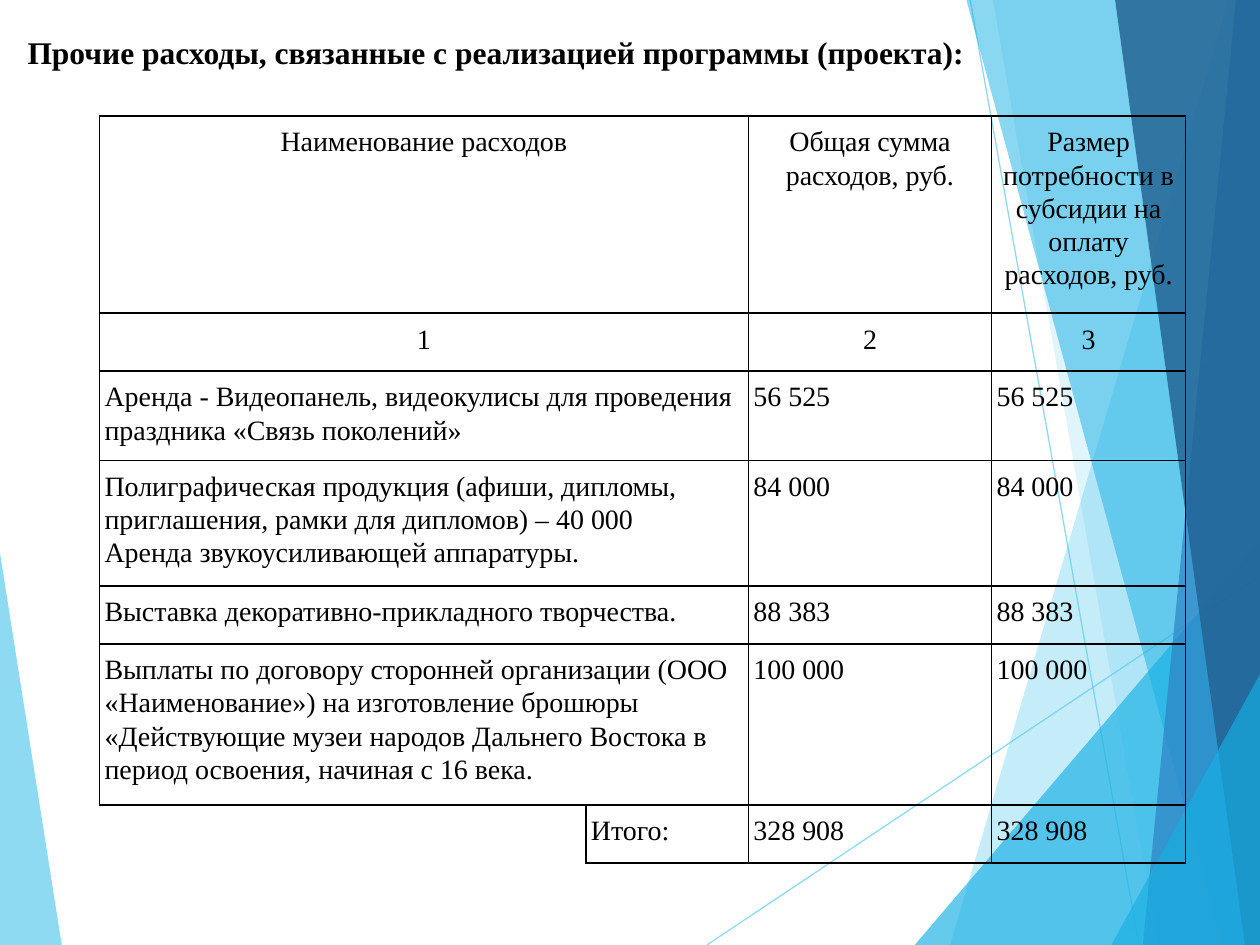
from lxml.etree import SubElement
from pptx import Presentation
from pptx.dml.color import RGBColor
from pptx.enum.shapes import MSO_CONNECTOR
from pptx.enum.text import MSO_AUTO_SIZE, PP_ALIGN
from pptx.oxml.ns import qn
from pptx.util import Inches, Pt

FONT = "Times New Roman"
TITLE = "Прочие расходы, связанные с реализацией программы (проекта):"

# Decoration, back to front: outline or line ends, colour, opacity in percent
LEFT_WEDGE = ([(0, 4.39), (0.49, 7.5), (0, 7.5)], "5FCBEF", 70)
LINES = [
    ((5.61, 7.5), (10, 4.57)),
    ((7.7, 0), (9.04, 7.5)),
]
RIGHT_WEDGES = [
    ([(9.75, 0), (7.54, 7.5), (10, 7.5), (10, 0)], "5FCBEF", 36),
    ([(7.88, 0), (9.19, 7.5), (10, 7.5), (10, 0)], "5FCBEF", 20),
    ([(7.26, 7.5), (10, 4.29), (10, 7.5)], "17B0E4", 66),
    ([(7.67, 0), (9.7, 7.5), (10, 7.5), (10, 0)], "17B0E4", 50),
    ([(9.81, 0), (9.07, 7.5), (10, 7.5), (10, 0)], "2E83C3", 70),
    ([(8.85, 0), (9.88, 7.5), (10, 7.5), (10, 0)], "226292", 82),
    ([(8.82, 7.5), (10, 5.35), (10, 7.5)], "17B0E4", 66),
]

COLUMN_WIDTHS = [3.86, 1.29, 1.93, 1.54]
HEADER_ROWS = 2
# Row height, then name, total and subsidy; the name spans two columns
ROWS = [
    (1.56, "Наименование расходов", "Общая сумма расходов, руб.",
     "Размер потребности в субсидии на оплату расходов, руб."),
    (0.46, "1", "2", "3"),
    (0.71, "Аренда - Видеопанель, видеокулисы для проведения праздника «Связь поколений»",
     "56 525", "56 525"),
    (0.99, "Полиграфическая продукция (афиши, дипломы, приглашения, рамки для дипломов) – 40 000\n"
           "Аренда звукоусиливающей аппаратуры.", "84 000", "84 000"),
    (0.46, "Выставка декоративно-прикладного творчества.", "88 383", "88 383"),
    (1.28, "Выплаты по договору сторонней организации (ООО «Наименование») на изготовление "
           "брошюры «Действующие музеи народов Дальнего Востока в период освоения, "
           "начиная с 16 века.", "100 000", "100 000"),
    (0.46, "Итого:", "328 908", "328 908"),
]
CELL_FORMAT = {
    "margin_left": Inches(0.04), "margin_right": Inches(0.04),
    "margin_top": Inches(0.07), "margin_bottom": Inches(0.07),
}


def color(value):
    return RGBColor.from_string(value)


def set_opacity(shape, percent):
    for node in shape.element.spPr.iter(qn("a:srgbClr")):
        SubElement(node, qn("a:alpha"), val=str(percent * 1000))


def add_wedge(page, points, fill, opacity):
    corners = [(Inches(x), Inches(y)) for x, y in points]
    builder = page.shapes.build_freeform(*corners[0])
    builder.add_line_segments(corners[1:], close=True)
    shape = builder.convert_to_shape()
    shape.shadow.inherit = False
    shape.fill.solid()
    shape.fill.fore_color.rgb = color(fill)
    shape.line.fill.background()
    set_opacity(shape, opacity)


def add_thin_line(page, start, end):
    ends = [Inches(value) for value in start + end]
    line = page.shapes.add_connector(MSO_CONNECTOR.STRAIGHT, *ends)
    line.line.color.rgb = color("5FCBEF")
    line.line.width = Pt(0.75)
    set_opacity(line, 70)
    SubElement(line.element.spPr, qn("a:effectLst"))


def write(frame, text, size, align, bold=False, spacing=None):
    frame.text = text
    for para in frame.paragraphs:
        para.alignment = align
        para.line_spacing = spacing
        for span in para.runs:
            for name, value in {"name": FONT, "size": Pt(size), "bold": bold}.items():
                setattr(span.font, name, value)
            span.font.color.rgb = color("000000")


def set_borders(cell, sides):
    """Draw black lines on the given sides (L, R, T, B) and clear the others."""
    properties = cell._tc.get_or_add_tcPr()
    for index, side in enumerate("LRTB"):
        line = properties.makeelement(qn(f"a:ln{side}"), {"w": str(Pt(1))})
        properties.insert(index, line)
        if side in sides:
            fill = SubElement(line, qn("a:solidFill"))
            SubElement(fill, qn("a:srgbClr"), val="000000")
        else:
            SubElement(line, qn("a:noFill"))


def add_expenses(page):
    frame = page.shapes.add_table(
        len(ROWS), len(COLUMN_WIDTHS), Inches(0.79), Inches(0.92),
        Inches(sum(COLUMN_WIDTHS)), Inches(sum(row[0] for row in ROWS)))
    table = frame.table
    table.first_row = table.horz_banding = False
    for column, width in zip(table.columns, COLUMN_WIDTHS):
        column.width = Inches(width)

    last = len(ROWS) - 1
    for index, (height, *texts) in enumerate(ROWS):
        table.rows[index].height = Inches(height)
        for column in range(len(COLUMN_WIDTHS)):
            cell = table.cell(index, column)
            for name, value in CELL_FORMAT.items():
                setattr(cell, name, value)
            cell.fill.background()
            set_borders(cell, "TR" if (index, column) == (last, 0) else "LRTB")
        if index < last:
            table.cell(index, 0).merge(table.cell(index, 1))
        align = PP_ALIGN.CENTER if index < HEADER_ROWS else PP_ALIGN.LEFT
        name_column = 1 if index == last else 0
        for column, text in zip((name_column, 2, 3), texts):
            write(table.cell(index, column).text_frame, text, 16, align, spacing=1.07)


def main():
    deck = Presentation()
    deck.slide_width, deck.slide_height = Inches(10), Inches(7.5)
    page = deck.slides.add_slide(deck.slide_layouts[6])

    add_wedge(page, *LEFT_WEDGE)
    for start, end in LINES:
        add_thin_line(page, start, end)
    for wedge in RIGHT_WEDGES:
        add_wedge(page, *wedge)

    box = page.shapes.add_textbox(Inches(0.12), Inches(0.21), Inches(9.69), Inches(0.4))
    box.text_frame.word_wrap = True
    box.text_frame.auto_size = MSO_AUTO_SIZE.SHAPE_TO_FIT_TEXT
    write(box.text_frame, TITLE, 18, PP_ALIGN.JUSTIFY, bold=True)
    add_expenses(page)
    deck.save("out.pptx")


if __name__ == "__main__":
    main()
